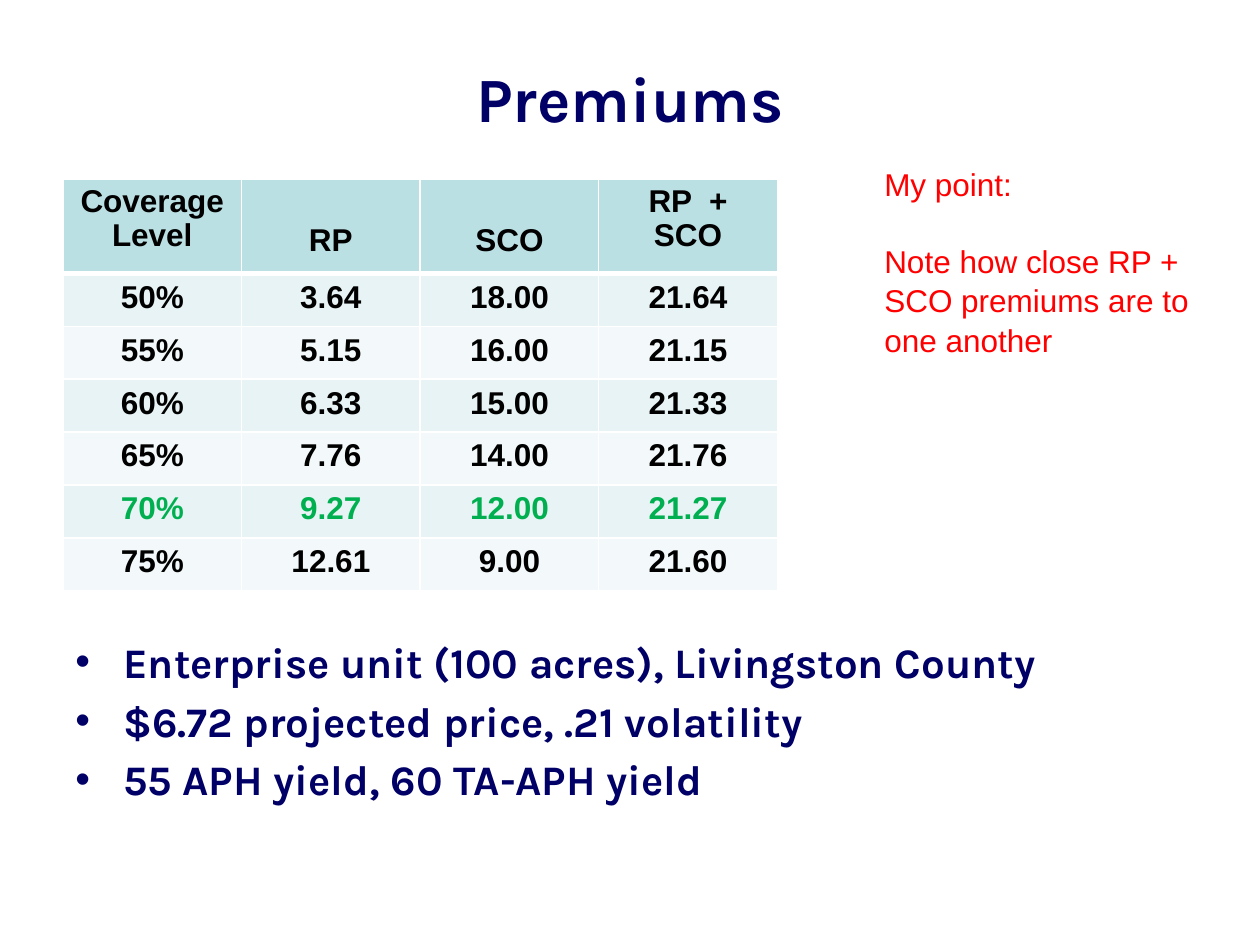
from dataclasses import dataclass
from typing import Optional

from lxml.etree import SubElement
from pptx import Presentation
from pptx.dml.color import RGBColor
from pptx.enum.text import MSO_ANCHOR as Anchor, PP_ALIGN as Align
from pptx.oxml.ns import qn
from pptx.util import Inches, Pt

NAVY, RED, GREEN = "000066", "FF0000", "00B050"
BLACK, WHITE, HEAD = "000000", "FFFFFF", "BBE0E3"
BANDS = ("E7F3F4", "F3F9FA")


@dataclass
class Style:
    font: str
    size: float
    color: str
    bold: bool = True
    align: Optional[Align] = None
    gap: float = 0
    lead: float = 1
    dots: bool = False


@dataclass
class Block:
    left: float
    top: float
    width: float
    height: float
    lines: list[str]
    style: Style
    anchor: Anchor = Anchor.TOP


BLOCKS = [
    Block(0.5, 0.3, 9, 0.95, ["Premiums"],
          Style("Karla", 36, NAVY, align=Align.CENTER), Anchor.MIDDLE),
    Block(0.5, 5, 8.67, 2.62,
          ["Enterprise unit (100 acres), Livingston County",
           "$6.72 projected price, .21 volatility",
           "55 APH yield, 60 TA-APH yield"],
          Style("Karla", 24, NAVY, gap=4.8, dots=True)),
    Block(6.92, 1.25, 2.83, 1.62,
          ["My point:",
           "Note how close RP + SCO premiums are to one another"],
          Style("Arial", 18, RED, bold=False, gap=21.5, lead=1.04)),
]

HEADS = [["Coverage", "Level"], ["RP"], ["SCO"], ["RP  +", "SCO"]]
ROWS = [
    ("50%", "3.64", "18.00", "21.64"),
    ("55%", "5.15", "16.00", "21.15"),
    ("60%", "6.33", "15.00", "21.33"),
    ("65%", "7.76", "14.00", "21.76"),
    ("70%", "9.27", "12.00", "21.27"),
    ("75%", "12.61", "9.00", "21.60"),
]


def rgb(code: str) -> RGBColor:
    return RGBColor.from_string(code)


def add_dot(para) -> None:
    props = para._p.get_or_add_pPr()
    props.set("marL", str(Inches(0.38)))
    props.set("indent", str(Inches(-0.38)))
    SubElement(props, qn("a:buFont"), typeface="Arial")
    SubElement(props, qn("a:buChar"), char="•")


def put_text(frame, lines: list[str], style: Style) -> None:
    for i, line in enumerate(lines):
        para = frame.add_paragraph() if i else frame.paragraphs[0]
        para.text = line
        if style.dots:
            add_dot(para)
        para.alignment = style.align
        para.line_spacing = style.lead
        para.space_before = Pt(style.gap if i else 0)
        font = para.font
        font.name, font.size = style.font, Pt(style.size)
        font.bold, font.color.rgb = style.bold, rgb(style.color)


def add_block(slide, block: Block) -> None:
    box = slide.shapes.add_textbox(Inches(block.left), Inches(block.top),
                                   Inches(block.width), Inches(block.height))
    frame = box.text_frame
    frame.word_wrap = True
    frame.vertical_anchor = block.anchor
    put_text(frame, block.lines, block.style)


def set_edge(cell, base: float) -> None:
    props = cell._tc.get_or_add_tcPr()
    for side in ("L", "R", "T", "B"):
        width = base if side == "B" else 1
        line = SubElement(props, qn(f"a:ln{side}"), w=str(Pt(width)))
        fill = SubElement(line, qn("a:solidFill"))
        SubElement(fill, qn("a:srgbClr"), val=WHITE)


def fill_cell(cell, lines: list[str], color: str, style: Style,
              base: float = 1) -> None:
    set_edge(cell, base)
    cell.fill.solid()
    cell.fill.fore_color.rgb = rgb(color)
    put_text(cell.text_frame, lines, style)


def add_grid(slide) -> None:
    grid = slide.shapes.add_table(len(ROWS) + 1, len(HEADS), Inches(0.5),
                                  Inches(1.42), Inches(5.67), Inches(3.29)).table
    for i, row in enumerate(grid.rows):
        row.height = Inches(0.42 if i else 0.75)
    title = Style("Arial", 18, BLACK, align=Align.CENTER, lead=0.97)
    for j, lines in enumerate(HEADS):
        cell = grid.cell(0, j)
        fill_cell(cell, lines, HEAD, title, 3)
        if len(lines) == 1:
            cell.vertical_anchor = Anchor.BOTTOM
            cell.margin_bottom = Inches(0.12)
    for i, row in enumerate(ROWS):
        color = GREEN if row[0] == "70%" else BLACK
        style = Style("Arial", 18, color, align=Align.CENTER)
        for j, text in enumerate(row):
            fill_cell(grid.cell(i + 1, j), [text], BANDS[i % 2], style)


def main() -> None:
    deck = Presentation()
    deck.slide_width, deck.slide_height = Inches(10), Inches(7.5)
    slide = deck.slides.add_slide(deck.slide_layouts[6])
    add_grid(slide)
    for block in BLOCKS:
        add_block(slide, block)
    deck.save("out.pptx")


if __name__ == "__main__":
    main()
